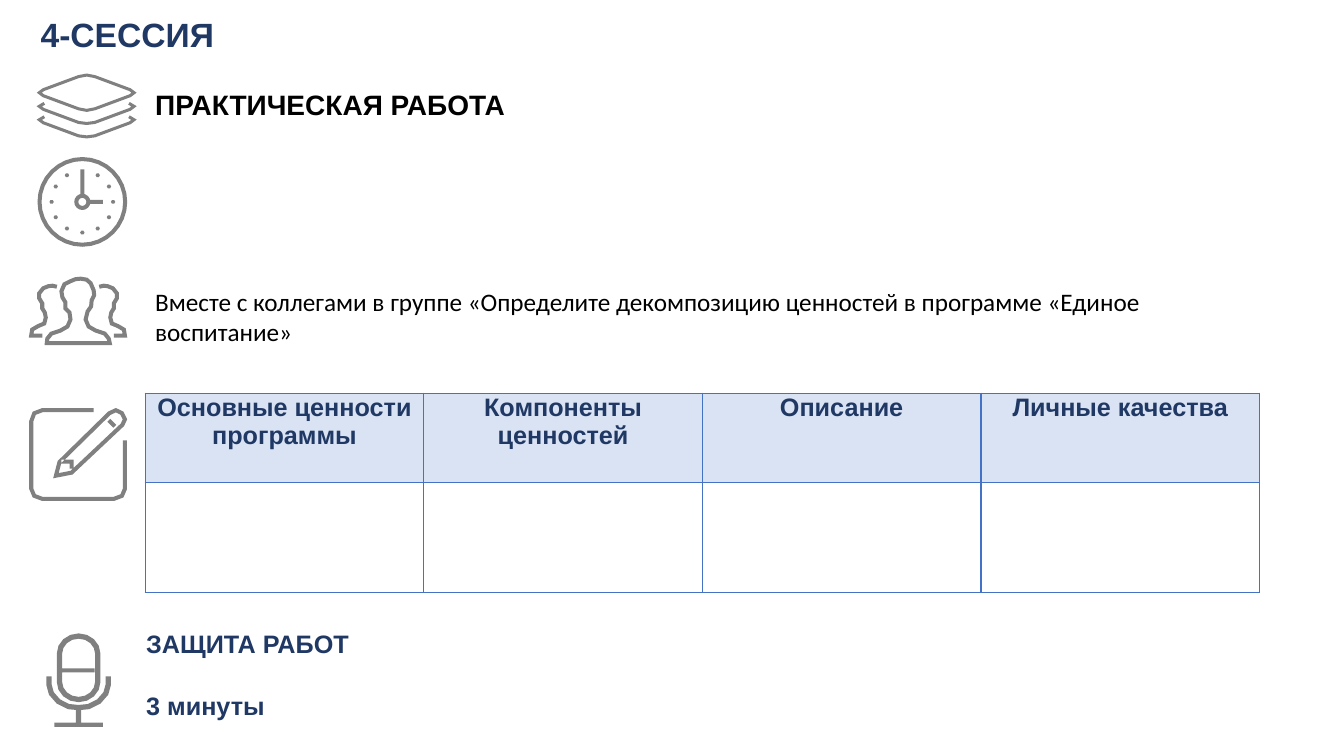
from dataclasses import dataclass
from math import cos, hypot, pi, sin

from lxml import etree
from pptx import Presentation
from pptx.dml.color import RGBColor
from pptx.enum.text import MSO_ANCHOR, MSO_AUTO_SIZE, PP_ALIGN
from pptx.oxml.ns import qn
from pptx.util import Cm, Pt

LEFT, MID, TOP = PP_ALIGN.LEFT, PP_ALIGN.CENTER, MSO_ANCHOR.TOP
FIXED = MSO_AUTO_SIZE.NONE


@dataclass(frozen=True)
class Theme:
    navy: str = "203864"
    black: str = "000000"
    gray: str = "808080"
    blue: str = "4472C4"
    pale: str = "DAE3F3"
    white: str = "FFFFFF"
    head: int = 24
    sub: int = 20
    text: int = 18
    sans: str = "Arial"
    plain: str = "Calibri"


theme = Theme()


def write(frame, text, size, color, font=theme.sans, bold=True, align=LEFT):
    frame.text = text
    frame.word_wrap = True
    for para in frame.paragraphs:
        para.alignment = align
        para.space_before = Pt(0)
        for run in para.runs:
            run.font.size = Pt(size)
            run.font.name = font
            run.font.bold = bold
            run.font.color.rgb = RGBColor.from_string(color)


def band(points, closed, width):
    outer, inner = [], []
    last = len(points) - 1
    for num, (x, y) in enumerate(points):
        prior = points[num - 1] if num or closed else (x, y)
        after = points[(num + 1) % len(points)] if num < last or closed else (x, y)
        norms = []
        for (ax, ay), (bx, by) in ((prior, (x, y)), ((x, y), after)):
            size = hypot(bx - ax, by - ay)
            if size:
                norms.append(((ay - by) / size, (bx - ax) / size))
        (ax, ay), (bx, by) = norms[0], norms[-1]
        reach = width / 2 / (1 + ax * bx + ay * by)
        dx, dy = (ax + bx) * reach, (ay + by) * reach
        outer.append((x + dx, y + dy))
        inner.append((x - dx, y - dy))
    return [outer, inner] if closed else [outer + inner[::-1]]


deck = Presentation()
deck.slide_width, deck.slide_height = Cm(33.87), Cm(19.05)
slide = deck.slides.add_slide(deck.slide_layouts[1])
shapes = slide.shapes

title, body = shapes.title, slide.placeholders[1]
title.left, title.top, title.width, title.height = Cm(0.77), Cm(0.23), Cm(5.16), Cm(1.27)
body.left, body.top, body.width, body.height = Cm(3.43), Cm(15.7), Cm(13.67), Cm(3.33)
work = shapes.add_textbox(Cm(3.66), Cm(2.08), Cm(9.42), Cm(1.12))
task = shapes.add_textbox(Cm(3.66), Cm(7.09), Cm(28.07), Cm(1.8))

write(title.text_frame, "4-СЕССИЯ", theme.head, theme.navy)
write(body.text_frame, "ЗАЩИТА РАБОТ\n3 минуты", theme.text, theme.navy)
write(work.text_frame, "ПРАКТИЧЕСКАЯ РАБОТА", theme.sub, theme.black)
write(task.text_frame,
      "Вместе с коллегами в группе «Определите декомпозицию ценностей в программе «Единое воспитание»",
      theme.text, theme.black, theme.plain, False)
for box in (title, body, work, task):
    box.text_frame.vertical_anchor = TOP
    box.text_frame.auto_size = FIXED
title.text_frame.word_wrap = work.text_frame.word_wrap = False
for para in body.text_frame.paragraphs:
    props = para._p.get_or_add_pPr()
    props.set("marL", "0")
    props.set("indent", "0")
    etree.SubElement(props, qn("a:buNone"))
body.text_frame.paragraphs[1].space_before = Pt(22.5)

heads = ["Основные ценности программы", "Компоненты ценностей", "Описание", "Личные качества"]
table = shapes.add_table(2, len(heads), Cm(3.66), Cm(9.91), Cm(28.08), Cm(5.02)).table
table.first_row = table.horz_banding = False
for col in table.columns:
    col.width = Cm(7.02)
for row, high in zip(table.rows, (2.24, 2.78)):
    row.height = Cm(high)
for num, head in enumerate(heads):
    for line, (text, fill) in enumerate(((head, theme.pale), ("", theme.white))):
        cell = table.cell(line, num)
        cell.margin_left = cell.margin_right = Cm(0.18)
        cell.margin_top = cell.margin_bottom = 0
        write(cell.text_frame, text, theme.text, theme.navy, align=MID)
        cell.fill.solid()
        cell.fill.fore_color.rgb = RGBColor.from_string(fill)
        props = cell._tc.get_or_add_tcPr()
        for spot, side in enumerate(("lnL", "lnR", "lnT", "lnB")):
            edge = etree.Element(qn("a:" + side), w=str(Pt(1)))
            paint = etree.SubElement(edge, qn("a:solidFill"))
            etree.SubElement(paint, qn("a:srgbClr"), val=theme.blue)
            props.insert(spot, edge)

cover = [(43, 89), (78, 76), (86, 74.5), (94, 76), (129, 89), (133, 92), (129, 95),
         (94, 108), (86, 109.5), (78, 108), (43, 95), (39, 92)]
sheet = [(44, 102.5), (39, 105.5), (43, 108.5), (78, 121.5), (86, 122.5),
         (94, 121.5), (129, 108.5), (133, 105.5), (128, 102.5)]
lower = [(x, y + 13.3) for x, y in sheet]
front = [(46.5, 340.5), (47, 336), (51, 331), (60, 328), (67, 324), (70, 317), (69, 310),
         (65, 306), (65, 300), (62, 295), (61, 289), (64, 282), (70, 279), (75, 277),
         (80, 276.5), (86, 277.5), (90, 281), (93, 288), (93.5, 293), (91, 298),
         (90.5, 304), (87, 309), (85, 317), (88, 324), (95, 328), (104, 331),
         (108, 336), (109, 340.5)]
side = [(42, 333), (31, 333), (32, 327), (38, 323.5), (44, 321), (45.5, 315),
        (44.5, 310), (42, 306), (42, 301), (39, 296), (39, 291), (43, 286),
        (48, 284), (52, 283.5), (56.5, 284.5)]
page = [(93, 407), (42, 407), (34, 410), (31, 418), (31, 485), (34, 492), (42, 495),
        (113, 495), (121, 492), (124, 485), (124, 437)]
pen = [(55.5, 472), (59, 458.5), (108.5, 410), (115, 407), (121, 410), (124, 416),
       (121.5, 421.5), (71, 469)]
cup = [(48.5, 671), (48.5, 679), (51, 688), (58, 696), (68, 701), (78, 702)]
cup += [(156 - x, y) for x, y in reversed(cup[:-1])]
mic = [(78 + 19 * cos(n * pi / 8), 662.5 + (14 if n < 9 else -14) + 17.5 * sin(n * pi / 8))
       for n in [*range(9), 8.999, *range(9, 16), 15.999]
       if n != 8.999 and n != 15.999]
mic.insert(9, (59, 648.5))
mic.append((97, 648.5))

mid_x, mid_y = 81.7, 200.3
clock = [([(mid_x, 168), (mid_x, 192.3)], False, 4), ([(89.7, mid_y), (102, mid_y)], False, 4)]
rings = [(mid_x, mid_y, 42.5, 32, 4), (mid_x, mid_y, 6, 16, 4)]
for hour in range(1, 12):
    turn = hour * pi / 6
    rings.append((mid_x + 30.5 * sin(turn), mid_y - 30.5 * cos(turn), 1, 6, 2))
for x, y, reach, count, width in rings:
    ring = [(x + reach * cos(2 * pi * n / count), y + reach * sin(2 * pi * n / count))
            for n in range(count)]
    clock.append((ring, True, width))

icons = [
    [(front, True, 4), (side, False, 4), ([(155 - x, y) for x, y in side], False, 4)],
    [(cover, True, 3)],
    [(sheet, False, 3)],
    [(lower, False, 3)],
    [(page, False, 4), (pen, True, 4), ([(108, 417), (114, 423)], False, 4),
     ([(61, 458), (71, 458), (71, 465)], False, 4)],
    clock,
    [(mic, True, 5.2), (cup, False, 5.2), ([(62, 665), (94, 665)], False, 4),
     ([(78, 704.6), (78, 717)], False, 5.2), ([(54, 719), (102, 719)], False, 4)],
]
fine = 100
for strokes in icons:
    rims = [[(x * fine, y * fine) for x, y in rim] for stroke in strokes for rim in band(*stroke)]
    pencil = shapes.build_freeform(*rims[0][0], scale=Cm(0.0254) / fine)
    for num, rim in enumerate(rims):
        if num:
            pencil.move_to(*rim[0])
        pencil.add_line_segments(rim[1:], close=True)
    icon = pencil.convert_to_shape()
    icon.shadow.inherit = False
    icon.fill.solid()
    icon.fill.fore_color.rgb = RGBColor.from_string(theme.gray)
    icon.line.fill.background()

deck.save("out.pptx")
